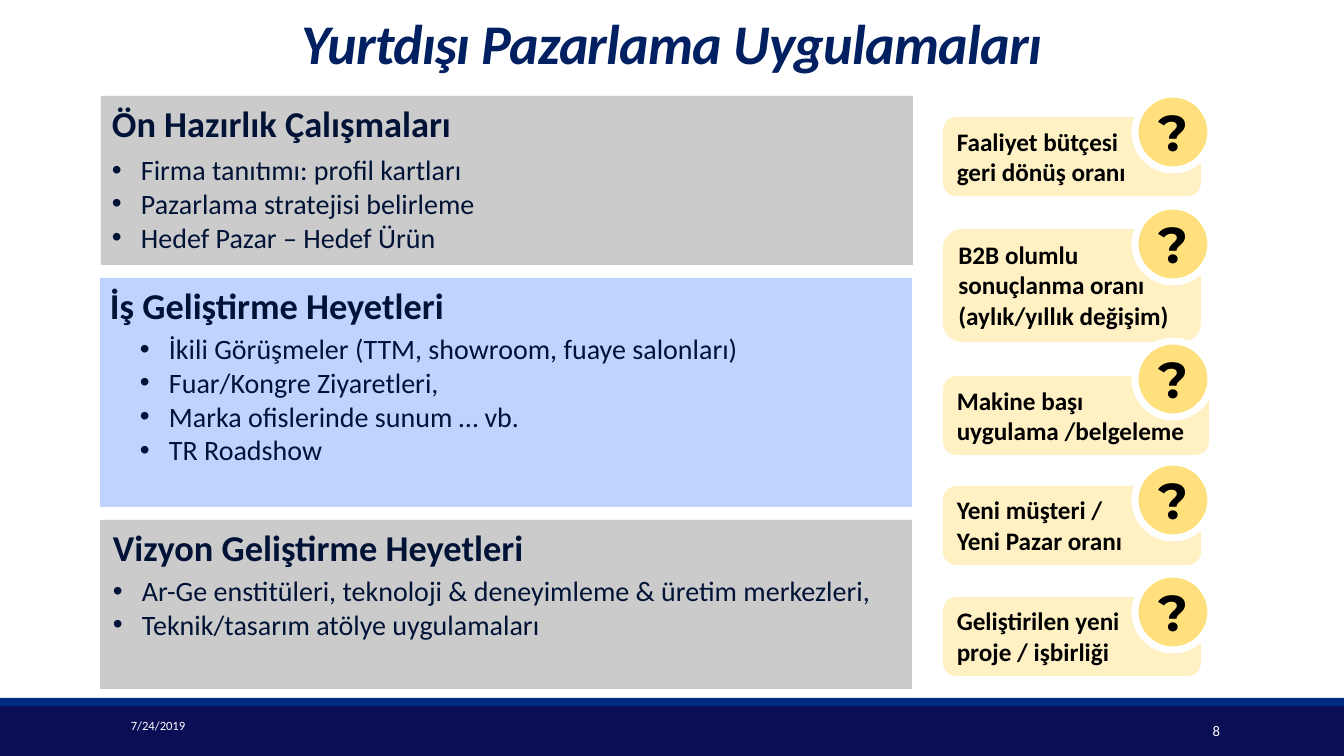
from dataclasses import dataclass

from lxml import etree
from pptx import Presentation
from pptx.dml.color import RGBColor
from pptx.enum.shapes import MSO_SHAPE
from pptx.enum.text import MSO_ANCHOR, PP_ALIGN
from pptx.oxml.ns import qn
from pptx.util import Emu, Pt

RECTANGLE, ROUNDED, OVAL = MSO_SHAPE.RECTANGLE, MSO_SHAPE.ROUNDED_RECTANGLE, MSO_SHAPE.OVAL
TOP, MIDDLE, BOTTOM = MSO_ANCHOR.TOP, MSO_ANCHOR.MIDDLE, MSO_ANCHOR.BOTTOM
LEFT, CENTER, RIGHT = PP_ALIGN.LEFT, PP_ALIGN.CENTER, PP_ALIGN.RIGHT

TITLE = "Yurtdışı Pazarlama Uygulamaları"
DATE = "7/24/2019"
PAGE_NUMBER = "8"
PANELS = [
    dict(heading="Ön Hazırlık Çalışmaları", color="BFBFBF",
         left=101, top=96, height=169, heading_left=102, body_left=102, body_drop=52,
         bullets=["Firma tanıtımı: profil kartları",
                  "Pazarlama stratejisi belirleme",
                  "Hedef Pazar – Hedef Ürün"]),
    dict(heading="İş Geliştirme Heyetleri", color="AFC9FF",
         left=100, top=278, height=229, heading_left=100, body_left=130, body_drop=49,
         bullets=["İkili Görüşmeler (TTM, showroom, fuaye salonları)",
                  "Fuar/Kongre Ziyaretleri,",
                  "Marka ofislerinde sunum … vb.",
                  "TR Roadshow"]),
    dict(heading="Vizyon Geliştirme Heyetleri", color="BFBFBF",
         left=100, top=520, height=169, heading_left=103, body_left=103, body_drop=49,
         bullets=["Ar-Ge enstitüleri, teknoloji & deneyimleme & üretim merkezleri,",
                  "Teknik/tasarım atölye uygulamaları"]),
]
# Lines, top, width, height, rise of the question mark above the card
CARDS = [
    (["Faaliyet bütçesi", "geri dönüş oranı"], 117, 258, 79, 23),
    (["B2B olumlu sonuçlanma oranı (aylık/yıllık değişim)"], 229, 258, 113, 23),
    (["Makine başı", "uygulama /belgeleme"], 376, 266, 79, 35),
    (["Yeni müşteri /", "Yeni Pazar oranı"], 486, 258, 79, 24),
    (["Geliştirilen yeni", "proje / işbirliği"], 597, 258, 79, 23),
]


@dataclass(frozen=True)
class Theme:
    font: str = "Calibri"
    mark_font: str = "Montserrat"
    footer: str = "0B0D55"
    stripe: str = "002B82"
    title: str = "002062"
    ink: str = "001236"
    black: str = "000000"
    white: str = "FFFFFF"
    yellow: str = "FFE07D"
    title_size: float = 40
    mark_size: float = 36
    heading_size: float = 26
    body_size: float = 20
    card_size: float = 18
    page_size: float = 10.5
    date_size: float = 9


THEME = Theme()
EMU_PER_PX = 914400 / 100.8
SLIDE_WIDTH, SLIDE_HEIGHT = 1344, 756
FOOTER_TOP, STRIPE_HEIGHT = 706, 8
PANEL_WIDTH, HEADING_HEIGHT = 812, 54
CARD_LEFT = 943
CIRCLE_LEFT, CIRCLE_SIZE = 1135, 76
MARK_WIDTH, MARK_HEIGHT = 115, 72
BULLET_INDENT = 29


def px(length):
    return Emu(round(length * EMU_PER_PX))


def add_block(slide, kind, box, color, opacity=100, outline=None):
    shape = slide.shapes.add_shape(kind, *map(px, box))
    shape.shadow.inherit = False
    shape.fill.solid()
    shape.fill.fore_color.rgb = RGBColor.from_string(color)
    if opacity < 100:
        fill_color = shape._element.spPr.find(qn("a:solidFill"))[0]
        etree.SubElement(fill_color, qn("a:alpha"), val=str(opacity * 1000))
    if outline:
        shape.line.color.rgb = RGBColor.from_string(outline)
        shape.line.width = Pt(5)
    else:
        shape.line.fill.background()
    return shape


def add_bullet(paragraph):
    properties = paragraph._p.get_or_add_pPr()
    properties.set("marL", str(px(BULLET_INDENT)))
    properties.set("indent", str(-px(BULLET_INDENT)))
    etree.SubElement(properties, qn("a:buFont"), typeface="Arial")
    etree.SubElement(properties, qn("a:buChar"), char="•")


def write(shape, lines, size, color=THEME.ink, font=THEME.font, bold=False, italic=False,
          align=LEFT, anchor=TOP, bullets=False, line_spacing=None, tracking=None):
    frame = shape.text_frame
    frame.word_wrap = True
    frame.vertical_anchor = anchor
    for index, line in enumerate(lines):
        paragraph = frame.paragraphs[0] if index == 0 else frame.add_paragraph()
        paragraph.alignment = align
        if line_spacing:
            paragraph.line_spacing = line_spacing
        if bullets:
            add_bullet(paragraph)
        run = paragraph.add_run()
        run.text = line
        run.font.name, run.font.size = font, Pt(size)
        run.font.bold, run.font.italic = bold, italic
        run.font.color.rgb = RGBColor.from_string(color)
        if tracking:
            run._r.get_or_add_rPr().set("spc", str(round(tracking * 100)))


def add_text(slide, box, lines, size, **text_format):
    write(slide.shapes.add_textbox(*map(px, box)), lines, size, **text_format)


def add_footer(slide):
    add_block(slide, RECTANGLE, (0, FOOTER_TOP, SLIDE_WIDTH, SLIDE_HEIGHT - FOOTER_TOP),
              THEME.footer)
    add_block(slide, RECTANGLE, (0, FOOTER_TOP - STRIPE_HEIGHT, SLIDE_WIDTH, STRIPE_HEIGHT),
              THEME.stripe)
    add_text(slide, (121, 705, 272, 40), [DATE], THEME.date_size,
             color=THEME.white, anchor=MIDDLE)
    add_text(slide, (1086, 711, 144, 40), [PAGE_NUMBER], THEME.page_size,
             color=THEME.white, align=RIGHT, anchor=MIDDLE)


def add_panel(slide, panel):
    top, height, drop = panel["top"], panel["height"], panel["body_drop"]
    add_block(slide, RECTANGLE, (panel["left"], top, PANEL_WIDTH, height),
              panel["color"], opacity=80)
    add_text(slide, (panel["body_left"], top + drop, PANEL_WIDTH, height - drop),
             panel["bullets"], THEME.body_size, bullets=True)
    add_text(slide, (panel["heading_left"], top, PANEL_WIDTH, HEADING_HEIGHT),
             [panel["heading"]], THEME.heading_size, bold=True)


def add_card(slide, lines, top, width, height, rise):
    card = add_block(slide, ROUNDED, (CARD_LEFT, top, width, height), THEME.yellow, opacity=45)
    write(card, lines, THEME.card_size, color=THEME.black, bold=True)
    circle_top = top - rise
    add_block(slide, OVAL, (CIRCLE_LEFT, circle_top, CIRCLE_SIZE, CIRCLE_SIZE),
              THEME.yellow, outline=THEME.white)
    mark_left = CIRCLE_LEFT + (CIRCLE_SIZE - MARK_WIDTH) / 2
    mark_top = circle_top + (CIRCLE_SIZE - MARK_HEIGHT) / 2
    add_text(slide, (mark_left, mark_top, MARK_WIDTH, MARK_HEIGHT), ["?"], THEME.mark_size,
             color=THEME.black, font=THEME.mark_font, bold=True, align=CENTER)


def main():
    presentation = Presentation()
    presentation.slide_width, presentation.slide_height = px(SLIDE_WIDTH), px(SLIDE_HEIGHT)
    slide = presentation.slides.add_slide(presentation.slide_layouts[6])
    add_footer(slide)
    add_text(slide, (0, -5, SLIDE_WIDTH, 86), [TITLE], THEME.title_size, color=THEME.title,
             bold=True, italic=True, align=CENTER, anchor=BOTTOM,
             line_spacing=0.85, tracking=-0.5)
    for panel in PANELS:
        add_panel(slide, panel)
    for card in CARDS:
        add_card(slide, *card)
    presentation.save("out.pptx")


if __name__ == "__main__":
    main()
